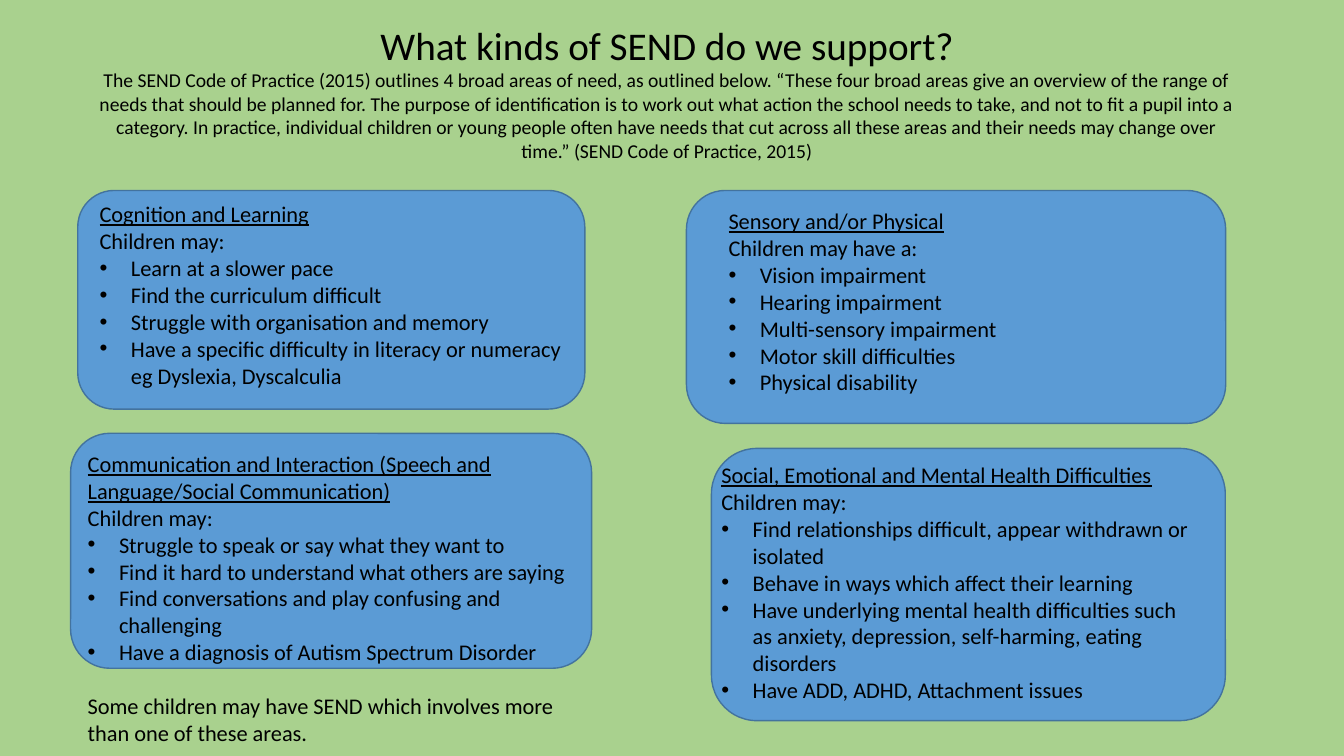
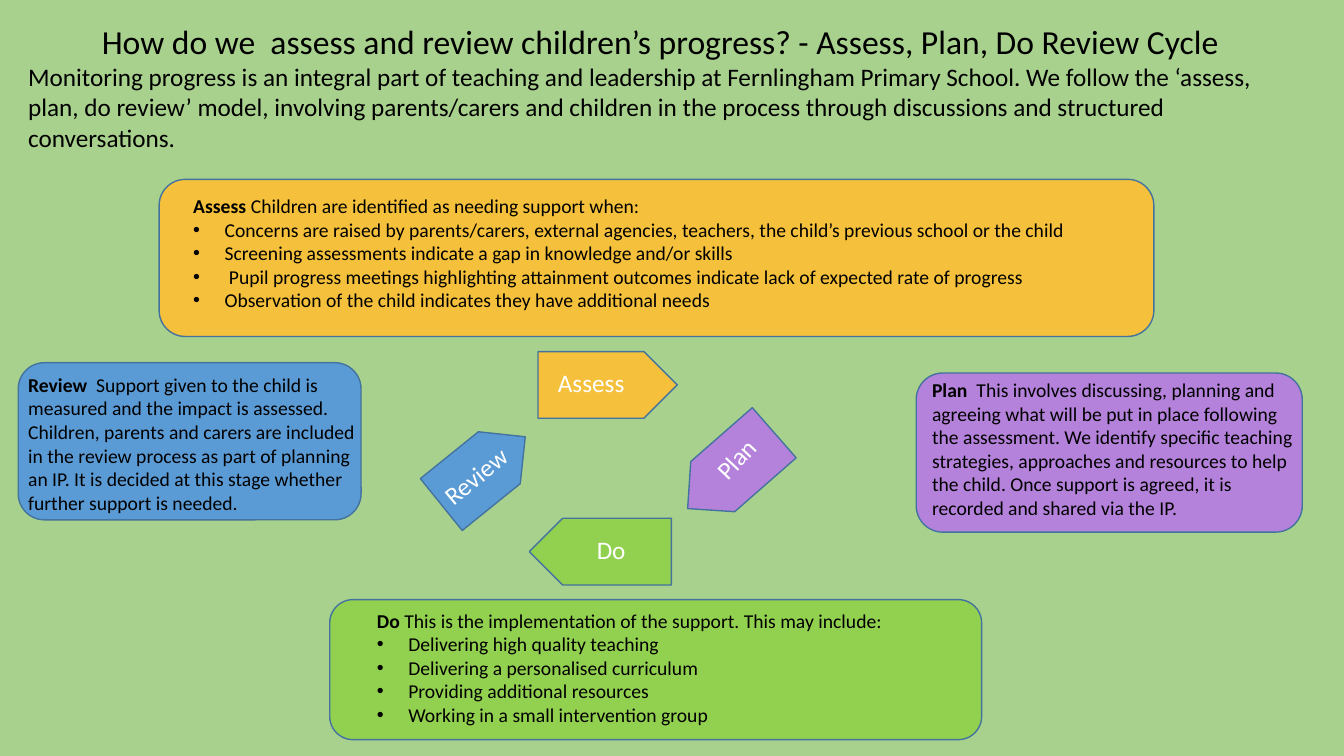
from lxml import etree
from pptx import Presentation
from pptx.dml.color import RGBColor
from pptx.enum.shapes import MSO_SHAPE
from pptx.enum.text import PP_ALIGN
from pptx.oxml.ns import qn
from pptx.util import Cm, Pt

ROUNDED = MSO_SHAPE.ROUNDED_RECTANGLE
PENTAGON = MSO_SHAPE.PENTAGON
LEFT, CENTER = PP_ALIGN.LEFT, PP_ALIGN.CENTER

COLORS = {
    "background": "A9D18E",
    "outline": "43739E",
    "text": "000000",
    "label": "FFFFFF",
    "assess": "F5C03B",
    "plan": "B482DA",
    "do": "92D050",
    "review": "5B9BD5",
}
FONT = "Calibri"
BULLET_INDENT = Cm(0.79)

# Each area: card box, text offset (left, top, width), heading, intro, bullets
AREAS = [
    ((1.96, 4.8, 12.78, 5.51), (0.3, 0.13, 12.14),
     "Cognition and Learning", "Children may:",
     ["Learn at a slower pace",
      "Find the curriculum difficult",
      "Struggle with organisation and memory",
      "Have a specific difficulty in literacy or numeracy eg Dyslexia, Dyscalculia"]),
    ((17.3, 4.8, 13.59, 5.87), (0.81, 0.3, 11.51),
     "Sensory and/or Physical", "Children may have a:",
     ["Vision impairment",
      "Hearing impairment",
      "Multi-sensory impairment",
      "Motor skill difficulties",
      "Physical disability"]),
    ((1.78, 10.92, 13.13, 5.92), (0.18, 0.3, 12.95),
     "Communication and Interaction (Speech and Language/Social Communication)",
     "Children may:",
     ["Struggle to speak or say what they want to",
      "Find it hard to understand what others are saying",
      "Find conversations and play confusing and challenging",
      "Have a diagnosis of Autism Spectrum Disorder"]),
    ((17.93, 11.3, 12.95, 6.86), (0, 0.2, 12.32),
     "Social, Emotional and Mental Health Difficulties", "Children may:",
     ["Find relationships difficult, appear withdrawn or isolated",
      "Behave in ways which affect their learning",
      "Have underlying mental health difficulties such as anxiety, depression, "
      "self-harming, eating disorders",
      "Have ADD, ADHD, Attachment issues"]),
]

# Each stage: colour, card box, text offset, bold lead, intro, bullets
STAGES = [
    ("assess", (4.01, 4.52, 25.07, 3.96), (0.61, 0.25, 22.5),
     "Assess ", "Children are identified as needing support when:",
     ["Concerns are raised by parents/carers, external agencies, teachers, "
      "the child’s previous school or the child",
      "Screening assessments indicate a gap in knowledge and/or skills",
      " Pupil progress meetings highlighting attainment outcomes indicate "
      "lack of expected rate of progress",
      "Observation of the child indicates they have additional needs"]),
    ("review", (0.46, 9.14, 8.64, 3.96), (0, 0.13, 8.79),
     "Review  ",
     "Support given to the child is measured and the impact is assessed. "
     "Children, parents and carers are included in the review process as part "
     "of planning an IP. It is decided at this stage whether further support "
     "is needed.", []),
    ("plan", (23.09, 9.4, 9.73, 4.01), (0.15, 0, 9.86),
     "Plan ",
     " This involves discussing, planning and agreeing what will be put in "
     "place following the assessment. We identify specific teaching "
     "strategies, approaches and resources to help the child. Once support is "
     "agreed, it is recorded and shared via the IP.", []),
    ("do", (8.31, 15.11, 16.43, 3.53), (0.94, 0.1, 15.4),
     "Do ", "This is the implementation of the support. This may include:",
     ["Delivering high quality teaching",
      "Delivering a personalised curriculum",
      "Providing additional resources",
      "Working in a small intervention group"]),
]

# Each arrow: colour, box, rotation, label, label offset, label rotation
ARROWS = [
    ("assess", (13.56, 8.86, 3.51, 1.68), 0, "Assess", (0.25, 0.28, 2.36), 0),
    ("plan", (16.97, 11.02, 2.9, 1.68), 138.8, "Plan", (0.74, -0.03, 1.78), 313.4),
    ("do", (13.34, 13.06, 3.58, 1.68), 180, "Do", (1.45, 0.28, 2.1), 0),
    ("review", (10.82, 11.02, 2.72, 1.68), 321.1, "Review", (-0.03, 0.41, 2.49), 320.2),
]


def rgb(name):
    return RGBColor.from_string(COLORS[name])


def add_panel(slide, kind, box, color, rotation=0):
    """Draw a filled, outlined shape."""
    shape = slide.shapes.add_shape(kind, *map(Cm, box))
    shape.shadow.inherit = False
    shape.fill.solid()
    shape.fill.fore_color.rgb = rgb(color)
    shape.line.color.rgb = rgb("outline")
    shape.line.width = Pt(1)
    shape.rotation = rotation


def set_bullet(paragraph):
    properties = paragraph._p.get_or_add_pPr()
    properties.set("marL", str(BULLET_INDENT))
    properties.set("indent", str(-BULLET_INDENT))
    etree.SubElement(properties, qn("a:buFont")).set("typeface", "Arial")
    etree.SubElement(properties, qn("a:buChar")).set("char", "•")


def add_text(slide, box, paragraphs, color="text", rotation=0):
    """Write paragraphs given as (runs, alignment, bulleted); a run is (text, format)."""
    text_box = slide.shapes.add_textbox(*map(Cm, box))
    text_box.rotation = rotation
    frame = text_box.text_frame
    frame.word_wrap = True
    for index, (runs, alignment, bulleted) in enumerate(paragraphs):
        paragraph = frame.add_paragraph() if index else frame.paragraphs[0]
        paragraph.alignment = alignment
        if bulleted:
            set_bullet(paragraph)
        for text, values in runs:
            run = paragraph.add_run()
            run.text = text
            run.font.color.rgb = rgb(color)
            for name, value in {"name": FONT, **values}.items():
                setattr(run.font, name, value)


def add_header(slide, box, title, title_size, body, body_size, alignment):
    add_text(slide, box, [
        ([(title, {"size": Pt(title_size)})], CENTER, False),
        ([(body, {"size": Pt(body_size)})], alignment, False),
    ])


def add_card(slide, box, offset, color, opening, bullets, size):
    """Draw a rounded card; opening lists the runs of each paragraph above the bullets."""
    add_panel(slide, ROUNDED, box, color)
    left, top, _, height = box
    shift, drop, text_width = offset
    lines = [(runs, LEFT, False) for runs in opening]
    lines += [([(bullet, {"size": Pt(size)})], LEFT, True) for bullet in bullets]
    add_text(slide, (left + shift, top + drop, text_width, height - drop), lines)


def add_cycle_arrow(slide, color, box, rotation, label, offset, label_rotation):
    add_panel(slide, PENTAGON, box, color, rotation)
    shift, drop, width = offset
    add_text(slide, (box[0] + shift, box[1] + drop, width, 1.02),
             [([(label, {"size": Pt(18)})], LEFT, False)], "label", label_rotation)


def add_slide(presentation):
    slide = presentation.slides.add_slide(presentation.slide_layouts[6])
    slide.background.fill.solid()
    slide.background.fill.fore_color.rgb = rgb("background")
    return slide


def build_areas_slide(presentation):
    slide = add_slide(presentation)
    add_header(
        slide, (2.13, 0.41, 29.36, 3.84), "What kinds of SEND do we support?", 28,
        "The SEND Code of Practice (2015) outlines 4 broad areas of need, as "
        "outlined below. “These four broad areas give an overview of the range "
        "of needs that should be planned for. The purpose of identification is "
        "to work out what action the school needs to take, and not to fit a "
        "pupil into a category. In practice, individual children or young "
        "people often have needs that cut across all these areas and their "
        "needs may change over time.” (SEND Code of Practice, 2015)", 14, CENTER)

    # Four areas of need
    size = 16
    plain = {"size": Pt(size)}
    for box, offset, heading, intro, bullets in AREAS:
        opening = [[(heading, {**plain, "underline": True})], [(intro, plain)]]
        add_card(slide, box, offset, "review", opening, bullets, size)

    # Closing note
    note = "Some children may have SEND which involves more than one of these areas."
    add_text(slide, (1.96, 17.32, 12.95, 1.6), [([(note, plain)], LEFT, False)])


def build_cycle_slide(presentation):
    slide = add_slide(presentation)
    add_header(
        slide, (0.46, 0.41, 32.36, 3.58),
        "How do we  assess and review children’s progress? - Assess, Plan, Do Review Cycle",
        24,
        "Monitoring progress is an integral part of teaching and leadership at "
        "Fernlingham Primary School. We follow the ‘assess, plan, do review’ "
        "model, involving parents/carers and children in the process through "
        "discussions and structured conversations.", 18, LEFT)

    # Stage descriptions
    size = 14
    plain = {"size": Pt(size)}
    for color, box, offset, lead, intro, bullets in STAGES:
        opening = [[(lead, {**plain, "bold": True}), (intro, plain)]]
        add_card(slide, box, offset, color, opening, bullets, size)

    # Cycle of arrows
    for arrow in ARROWS:
        add_cycle_arrow(slide, *arrow)


def main():
    presentation = Presentation()
    presentation.slide_width = Cm(33.87)
    presentation.slide_height = Cm(19.05)
    build_areas_slide(presentation)
    build_cycle_slide(presentation)
    presentation.save("out.pptx")


if __name__ == "__main__":
    main()
